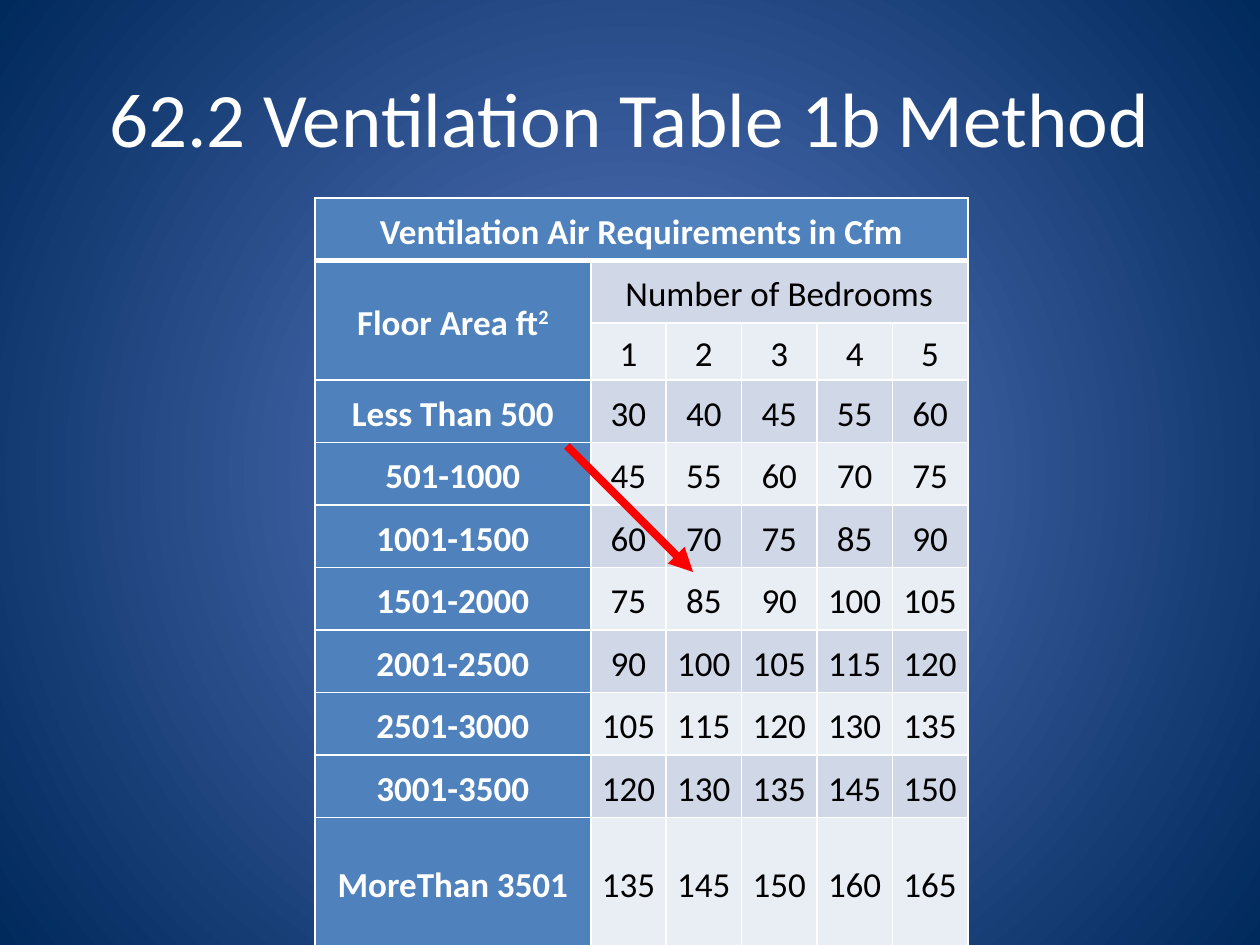
from dataclasses import dataclass
from typing import Any

from lxml.etree import SubElement
from pptx import Presentation
from pptx.dml.color import RGBColor as RGB
from pptx.enum.shapes import MSO_CONNECTOR as CONNECTOR
from pptx.enum.text import MSO_ANCHOR as ANCHOR, PP_ALIGN as ALIGN
from pptx.oxml.ns import qn
from pptx.util import Cm, Pt


@dataclass(frozen=True)
class Theme:
    font: str = "Calibri"
    title_size: int = 44
    table_size: int = 20
    white: str = "FFFFFF"
    black: str = "000000"
    header: str = "4F81BD"
    dark_band: str = "D0D8E8"
    light_band: str = "E9EDF4"
    arrow: str = "FF0000"
    glow: str = "5E7CC5"
    edge: str = "00295C"


@dataclass(frozen=True)
class FloorArea:
    label: str
    airflow: tuple[int, ...]  # cfm for 1 to 5 bedrooms


THEME = Theme()
BEDROOMS = (1, 2, 3, 4, 5)
FLOOR_AREAS = (
    FloorArea("Less Than 500", (30, 40, 45, 55, 60)),
    FloorArea("501-1000", (45, 55, 60, 70, 75)),
    FloorArea("1001-1500", (60, 70, 75, 85, 90)),
    FloorArea("1501-2000", (75, 85, 90, 100, 105)),
    FloorArea("2001-2500", (90, 100, 105, 115, 120)),
    FloorArea("2501-3000", (105, 115, 120, 130, 135)),
    FloorArea("3001-3500", (120, 130, 135, 145, 150)),
    FloorArea("MoreThan 3501", (135, 145, 150, 160, 165)),
)
COLUMN_WIDTHS = [5.56] + [1.52] * len(BEDROOMS)
ROW_HEIGHTS = [1.26, 1.26, 1.15] + [1.26] * (len(FLOOR_AREAS) - 1) + [2.6]


def add_text(frame: Any, text: str, *, size: int, color: str = THEME.white,
             bold: bool = False, superscript: str = "",
             line_spacing: float = 1.0, space_after: int = 0) -> None:
    """Write one centred paragraph, optionally ending in a superscript."""
    frame.word_wrap = True
    paragraph = frame.paragraphs[0]
    paragraph.alignment = ALIGN.CENTER
    paragraph.line_spacing = line_spacing
    paragraph.space_after = Pt(space_after)
    for part in filter(None, (text, superscript)):
        run = paragraph.add_run()
        run.text = part
        run.font.name = THEME.font
        run.font.size = Pt(size)
        run.font.bold = bold
        run.font.color.rgb = RGB.from_string(color)
    if superscript:
        run._r.get_or_add_rPr().set("baseline", "30000")


def set_borders(cell: Any, row: int) -> None:
    """Draw white borders, with a thick rule below the table heading."""
    thick_side = {0: "lnB", 1: "lnT"}.get(row)
    for side in ("lnL", "lnR", "lnT", "lnB"):
        width = Pt(3 if side == thick_side else 1)
        border = SubElement(cell._tc.get_or_add_tcPr(), qn(f"a:{side}"), w=str(width))
        fill = SubElement(border, qn("a:solidFill"))
        SubElement(fill, qn("a:srgbClr"), val=THEME.white)


def style_cell(cell: Any, row: int, column: int) -> None:
    cell.vertical_anchor = ANCHOR.MIDDLE
    cell.margin_left = cell.margin_right = Cm(0.18)
    cell.margin_top = cell.margin_bottom = 0
    set_borders(cell, row)
    band = THEME.dark_band if row % 2 else THEME.light_band
    cell.fill.solid()
    cell.fill.fore_color.rgb = RGB.from_string(
        THEME.header if row == 0 or column == 0 else band)


def write_cell(cell: Any, text: str, *, heading: bool = False,
               superscript: str = "") -> None:
    add_text(cell.text_frame, text, size=THEME.table_size, bold=heading,
             color=THEME.white if heading else THEME.black,
             superscript=superscript, line_spacing=1.15, space_after=10)


def paint_background(slide: Any) -> None:
    fill = slide.background.fill
    fill.gradient()
    for stop, color in zip(fill.gradient_stops, (THEME.glow, THEME.edge)):
        stop.color.rgb = RGB.from_string(color)
    gradient = slide.element.find(".//" + qn("a:gradFill"))
    gradient.remove(gradient.find(qn("a:lin")))
    circle = SubElement(gradient, qn("a:path"), path="circle")
    SubElement(circle, qn("a:fillToRect"), l="50000", t="50000", r="50000", b="50000")


def add_ventilation_table(slide: Any) -> None:
    rows, columns = len(ROW_HEIGHTS), len(COLUMN_WIDTHS)
    table = slide.shapes.add_table(
        rows, columns, Cm(6.35), Cm(3.99),
        Cm(sum(COLUMN_WIDTHS)), Cm(sum(ROW_HEIGHTS))).table
    for column, width in zip(table.columns, COLUMN_WIDTHS):
        column.width = Cm(width)
    for row, height in zip(table.rows, ROW_HEIGHTS):
        row.height = Cm(height)
    for row in range(rows):
        for column in range(columns):
            style_cell(table.cell(row, column), row, column)

    # Headings
    table.cell(0, 0).merge(table.cell(0, columns - 1))
    table.cell(1, 0).merge(table.cell(2, 0))
    table.cell(1, 1).merge(table.cell(1, columns - 1))
    write_cell(table.cell(0, 0), "Ventilation Air Requirements in Cfm", heading=True)
    write_cell(table.cell(1, 0), "Floor Area ft", heading=True, superscript="2")
    write_cell(table.cell(1, 1), "Number of Bedrooms")

    # Bedroom counts and airflow values
    for row, area in enumerate(FLOOR_AREAS, start=3):
        write_cell(table.cell(row, 0), area.label, heading=True)
    number_rows = [BEDROOMS] + [area.airflow for area in FLOOR_AREAS]
    for row, numbers in enumerate(number_rows, start=2):
        for column, number in enumerate(numbers, start=1):
            write_cell(table.cell(row, column), str(number))


def add_arrow(slide: Any) -> None:
    arrow = slide.shapes.add_connector(
        CONNECTOR.STRAIGHT, Cm(11.43), Cm(8.99), Cm(13.97), Cm(11.53))
    arrow.line.color.rgb = RGB.from_string(THEME.arrow)
    arrow.line.width = Pt(4.5)
    SubElement(arrow.line._get_or_add_ln(), qn("a:tailEnd"), type="triangle")
    SubElement(arrow._element.spPr, qn("a:effectLst"))


def main() -> None:
    presentation = Presentation()
    presentation.slide_width, presentation.slide_height = Cm(25.4), Cm(19.05)
    slide = presentation.slides.add_slide(presentation.slide_layouts[6])
    paint_background(slide)

    # Title
    title = slide.shapes.add_textbox(Cm(1.27), Cm(0.76), Cm(22.86), Cm(3.18))
    title.text_frame.vertical_anchor = ANCHOR.MIDDLE
    add_text(title.text_frame, "62.2 Ventilation Table 1b Method", size=THEME.title_size)

    # Table, with an arrow to the example value
    add_ventilation_table(slide)
    add_arrow(slide)
    presentation.save("out.pptx")


if __name__ == "__main__":
    main()
